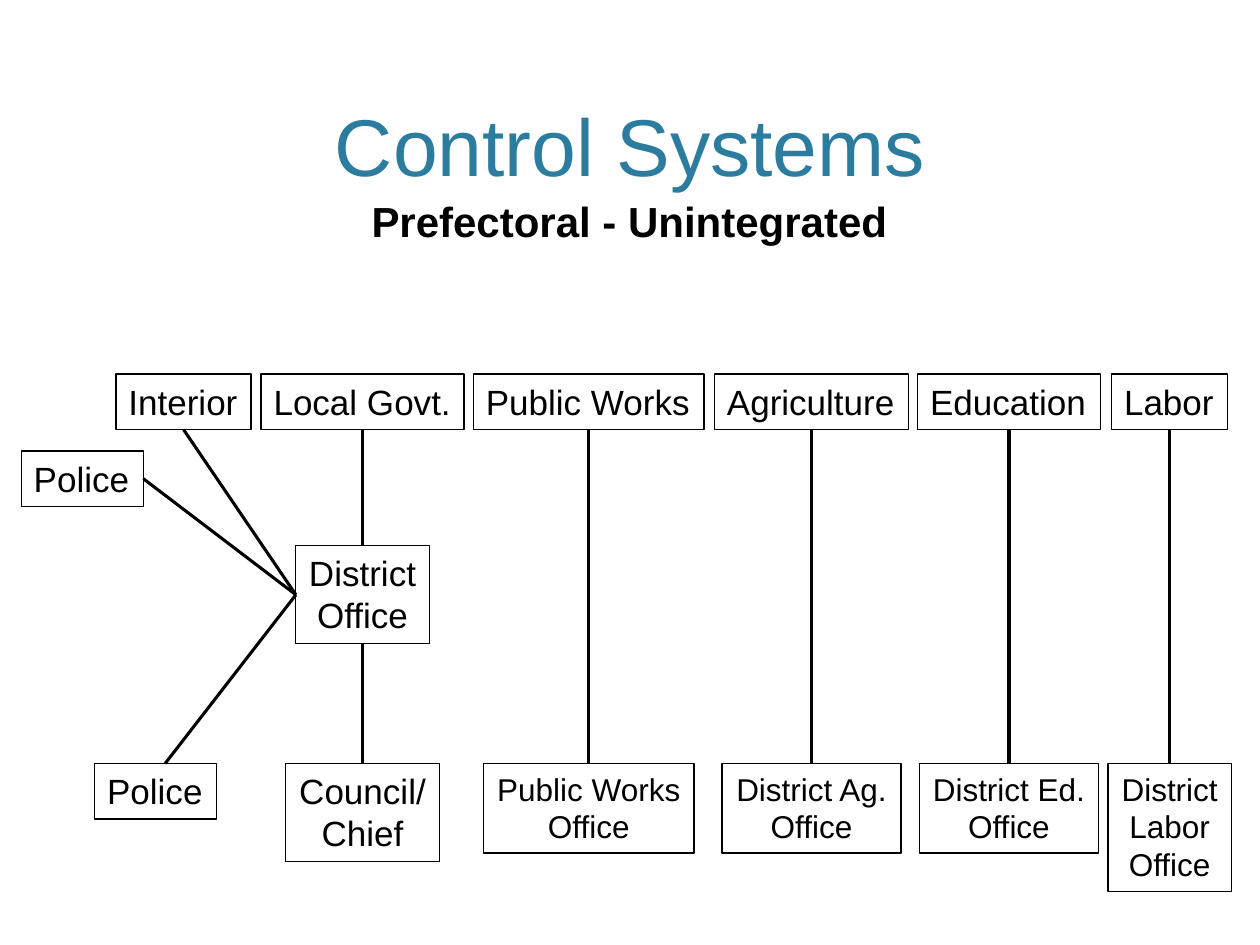
from dataclasses import dataclass

from lxml import etree
from pptx import Presentation
from pptx.dml.color import RGBColor
from pptx.enum import shapes, text
from pptx.oxml.ns import qn
from pptx.util import Cm, Pt


@dataclass(frozen=True)
class Theme:
    font: str = "Arial"
    ink: RGBColor = RGBColor(0, 0, 0)
    accent: RGBColor = RGBColor(0x2C, 0x7C, 0x9F)
    title: int = 46
    subtitle: int = 24
    unit: int = 20
    field_office: int = 18
    border: float = 0.75
    link: float = 1.75


THEME = Theme()
MINISTRY_TOP, DISTRICT_TOP, FIELD_TOP = 7.54, 11.0, 15.39


@dataclass(frozen=True)
class Unit:
    """One box of the chart, in centimetres, placed by its centre line."""
    label: str
    center: float
    top: float
    width: float
    size: int = THEME.unit

    @property
    def left(self) -> float:
        return self.center - self.width / 2

    @property
    def height(self) -> float:
        return 0.26 + 0.043 * self.size * len(self.label.split("\n"))

    @property
    def bottom(self) -> float:
        return self.top + self.height

    @property
    def middle(self) -> float:
        return self.top + self.height / 2


def style_text(frame, size: int, color: RGBColor, align, bold: bool = False) -> None:
    for paragraph in frame.paragraphs:
        paragraph.alignment = align
        for run in paragraph.runs:
            run.font.name = THEME.font
            run.font.size = Pt(size)
            run.font.bold = bold
            run.font.color.rgb = color


def draw_unit(slide, unit: Unit) -> None:
    box = slide.shapes.add_shape(
        shapes.MSO_SHAPE.RECTANGLE,
        Cm(unit.left), Cm(unit.top), Cm(unit.width), Cm(unit.height))
    box.shadow.inherit = False
    box.fill.background()
    box.line.color.rgb = THEME.ink
    box.line.width = Pt(THEME.border)
    frame = box.text_frame
    frame.text = unit.label
    frame.word_wrap = False
    frame.auto_size = text.MSO_AUTO_SIZE.SHAPE_TO_FIT_TEXT
    frame.vertical_anchor = text.MSO_ANCHOR.TOP
    align = text.PP_ALIGN.CENTER if "\n" in unit.label else text.PP_ALIGN.LEFT
    style_text(frame, unit.size, THEME.ink, align)


def draw_link(slide, start: tuple[float, float], end: tuple[float, float]) -> None:
    link = slide.shapes.add_connector(
        shapes.MSO_CONNECTOR.STRAIGHT, *(Cm(value) for value in start + end))
    link.line.color.rgb = THEME.ink
    link.line.width = Pt(THEME.link)
    etree.SubElement(link._element.spPr, qn("a:effectLst"))


def draw_headings(slide) -> None:
    title = slide.shapes.title
    title.left, title.top, title.width, title.height = Cm(1.52), Cm(0.3), Cm(22.36), Cm(3.71)
    title.text_frame.text = "Control Systems"
    title.text_frame.auto_size = text.MSO_AUTO_SIZE.NONE
    title.text_frame.vertical_anchor = text.MSO_ANCHOR.BOTTOM
    style_text(title.text_frame, THEME.title, THEME.accent, text.PP_ALIGN.CENTER)

    subtitle = slide.shapes.add_textbox(Cm(7.24), Cm(3.81), Cm(10.92), Cm(1.27))
    subtitle.text_frame.text = "Prefectoral - Unintegrated"
    subtitle.text_frame.word_wrap = False
    subtitle.text_frame.auto_size = text.MSO_AUTO_SIZE.SHAPE_TO_FIT_TEXT
    style_text(subtitle.text_frame, THEME.subtitle, THEME.ink, text.PP_ALIGN.LEFT, bold=True)


def main() -> None:
    deck = Presentation()
    deck.slide_width, deck.slide_height = Cm(25.4), Cm(19.05)
    slide = deck.slides.add_slide(deck.slide_layouts[5])
    draw_headings(slide)

    # Prefectoral branch, run through the district office
    interior = Unit("Interior", 3.7, MINISTRY_TOP, 2.72)
    local_govt = Unit("Local Govt.", 7.31, MINISTRY_TOP, 4.09)
    police = Unit("Police", 1.66, 9.09, 2.46)
    district = Unit("District\nOffice", 7.31, DISTRICT_TOP, 2.69)
    field_police = Unit("Police", 3.14, FIELD_TOP, 2.46)
    council = Unit("Council/\nChief", 7.31, FIELD_TOP, 3.1)

    # Ministries with a direct line to their own field office
    small = THEME.field_office
    direct = [
        (Unit(ministry, center, MINISTRY_TOP, ministry_width),
         Unit(office, center, FIELD_TOP, office_width, small))
        for ministry, office, center, ministry_width, office_width in [
            ("Public Works", "Public Works\nOffice", 11.87, 4.65, 4.24),
            ("Agriculture", "District Ag.\nOffice", 16.36, 3.91, 3.61),
            ("Education", "District Ed.\nOffice", 20.34, 3.68, 3.61),
            ("Labor", "District\nLabor\nOffice", 23.58, 2.34, 2.49),
        ]
    ]

    for unit in (interior, local_govt, police, district, field_police, council):
        draw_unit(slide, unit)
    for pair in direct:
        for unit in pair:
            draw_unit(slide, unit)

    # Links that meet at the left side of the district office
    hub = (district.left, district.middle)
    for start in [
        (interior.center, interior.bottom),
        (police.left + police.width, police.middle),
        (field_police.center + 0.19, field_police.top),
    ]:
        draw_link(slide, start, hub)

    # Vertical links from each unit to the one below
    for upper, lower in [(local_govt, district), (district, council), *direct]:
        draw_link(slide, (upper.center, upper.bottom), (lower.center, lower.top))

    deck.save("out.pptx")


if __name__ == "__main__":
    main()
